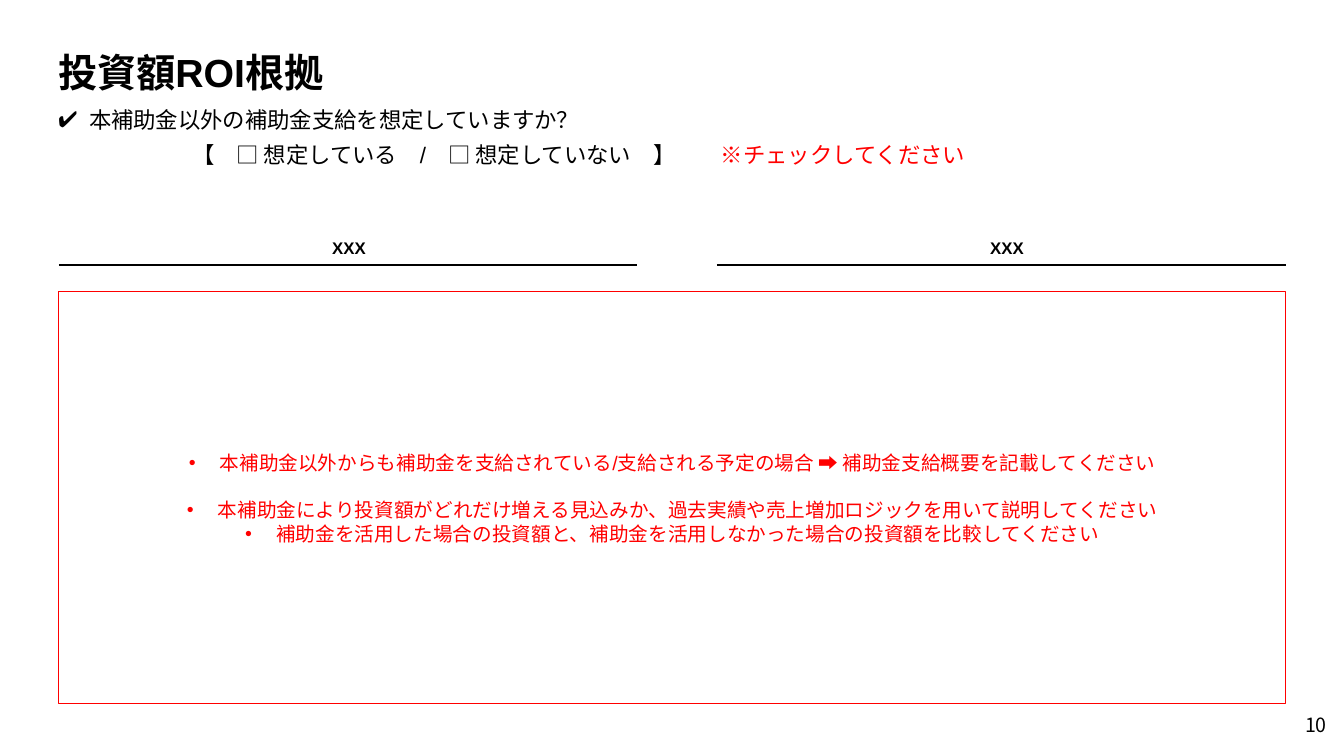
"""Build the slide on the grounds for the investment ROI."""
from lxml.etree import SubElement
from pptx import Presentation
from pptx.dml.color import RGBColor
from pptx.enum.shapes import MSO_CONNECTOR as CONNECTOR, MSO_SHAPE as SHAPE
from pptx.enum.text import MSO_ANCHOR as ANCHOR, MSO_AUTO_SIZE as AUTO_SIZE, PP_ALIGN as ALIGN
from pptx.oxml.ns import qn
from pptx.util import Emu, Pt

BLACK = RGBColor(0, 0, 0)
RED = RGBColor(255, 0, 0)
LATIN, JAPANESE = "Arial", "Noto Sans CJK JP"

TITLE = "投資額ROI根拠"
QUESTION = "本補助金以外の補助金支給を想定していますか？"
ANSWERS = "【　□ 想定している　/　□ 想定していない　】"
CHECK_HINT = "※チェックしてください"
HEADINGS = [("XXX", 59, 637), ("XXX", 717, 1286)]
GUIDANCE = [
    ("本補助金以外からも補助金を支給されている/支給される予定の場合 ➡ 補助金支給概要を記載してください", 0),
    ("本補助金により投資額がどれだけ増える見込みか、過去実績や売上増加ロジックを用いて説明してください", 17),
    ("補助金を活用した場合の投資額と、補助金を活用しなかった場合の投資額を比較してください", 0),
]
PAGE_NUMBER = "10"

SLIDE_W, SLIDE_H = 1344, 756
TITLE_BOX = (48, 43, 1246, 57)
QUESTION_BOX = (48, 101, 1257, 75)
GUIDANCE_BOX = (59, 292, 1227, 412)
NUMBER_BOX = (1286, 710, 57, 46)
HEADING_TOP, HEADING_W, HEADING_H, RULE_Y = 235, 578, 25, 265
HANGING, ANSWER_INDENT = 31, 134


def px(length):
    return Emu(round(length * 914400 / 100.8))


def place(part, box):
    part.left, part.top, part.width, part.height = map(px, box)


def set_frame(frame, anchor=ANCHOR.MIDDLE, margins=(10, 5, 10, 5)):
    frame.word_wrap = True
    frame.auto_size = AUTO_SIZE.NONE
    frame.vertical_anchor = anchor
    (frame.margin_left, frame.margin_top,
     frame.margin_right, frame.margin_bottom) = map(px, margins)


def write(paragraph, text, size, color=BLACK, bold=False, font=LATIN, spacing=0):
    run = paragraph.add_run()
    run.text = text
    run.font.size, run.font.bold, run.font.name = Pt(size), bold, font
    run.font.color.rgb = color
    properties = run.font._element
    if spacing:
        properties.set("spc", str(spacing * 100))
    SubElement(properties, qn("a:ea"), typeface=JAPANESE)


def set_paragraph(paragraph, align=ALIGN.LEFT, before=0, left=0, bullet=None, color=BLACK):
    paragraph.alignment = align
    paragraph.space_before = Pt(before)
    properties = paragraph._p.get_or_add_pPr()
    properties.set("marL", str(px(left)))
    properties.set("indent", str(px(-left if bullet else 0)))
    if bullet:
        bullet_color = SubElement(properties, qn("a:buClr"))
        SubElement(bullet_color, qn("a:srgbClr"), val=str(color))
        SubElement(properties, qn("a:buFont"), typeface=LATIN)
        SubElement(properties, qn("a:buChar"), char=bullet)
    else:
        SubElement(properties, qn("a:buNone"))


def add_heading(slide, text, left, right):
    group = slide.shapes.add_group_shape()
    heading = group.shapes.add_textbox(*map(px, (left + 1, HEADING_TOP, HEADING_W, HEADING_H)))
    set_frame(heading.text_frame)
    line = heading.text_frame.paragraphs[0]
    set_paragraph(line, ALIGN.CENTER)
    write(line, text, 12, bold=True)
    rule = group.shapes.add_connector(
        CONNECTOR.STRAIGHT, px(left), px(RULE_Y), px(right), px(RULE_Y))
    rule.line.color.rgb, rule.line.width = BLACK, Pt(1.5)
    SubElement(rule._element.spPr, qn("a:effectLst"))


def main():
    deck = Presentation()
    deck.slide_width, deck.slide_height = px(SLIDE_W), px(SLIDE_H)
    slide = deck.slides.add_slide(deck.slide_layouts[1])

    title, question = slide.placeholders
    place(title, TITLE_BOX)
    set_frame(title.text_frame)
    title_line = title.text_frame.paragraphs[0]
    set_paragraph(title_line)
    write(title_line, TITLE, 28, bold=True)

    number = slide.shapes.add_textbox(*map(px, NUMBER_BOX))
    set_frame(number.text_frame, margins=(0, 0, 16, 16))
    number_line = number.text_frame.paragraphs[0]
    set_paragraph(number_line, ALIGN.RIGHT)
    write(number_line, PAGE_NUMBER, 14, font=JAPANESE)

    place(question, QUESTION_BOX)
    set_frame(question.text_frame, ANCHOR.TOP)
    question_line = question.text_frame.paragraphs[0]
    set_paragraph(question_line, left=HANGING, bullet="✔")
    write(question_line, QUESTION, 16)
    answer_line = question.text_frame.add_paragraph()
    set_paragraph(answer_line, before=6, left=ANSWER_INDENT)
    write(answer_line, ANSWERS, 16)
    write(answer_line, "　", 16, spacing=16)
    write(answer_line, CHECK_HINT, 16, RED)

    guidance = slide.shapes.add_shape(SHAPE.RECTANGLE, *map(px, GUIDANCE_BOX))
    guidance.shadow.inherit = False
    guidance.fill.background()
    guidance.line.color.rgb, guidance.line.width = RED, Pt(0.75)
    set_frame(guidance.text_frame)
    for order, (text, before) in enumerate(GUIDANCE):
        frame = guidance.text_frame
        line = frame.add_paragraph() if order else frame.paragraphs[0]
        set_paragraph(line, ALIGN.CENTER, before, HANGING, "•", RED)
        write(line, text, 14, RED)

    for heading in HEADINGS:
        add_heading(slide, *heading)

    deck.save("out.pptx")


if __name__ == "__main__":
    main()
